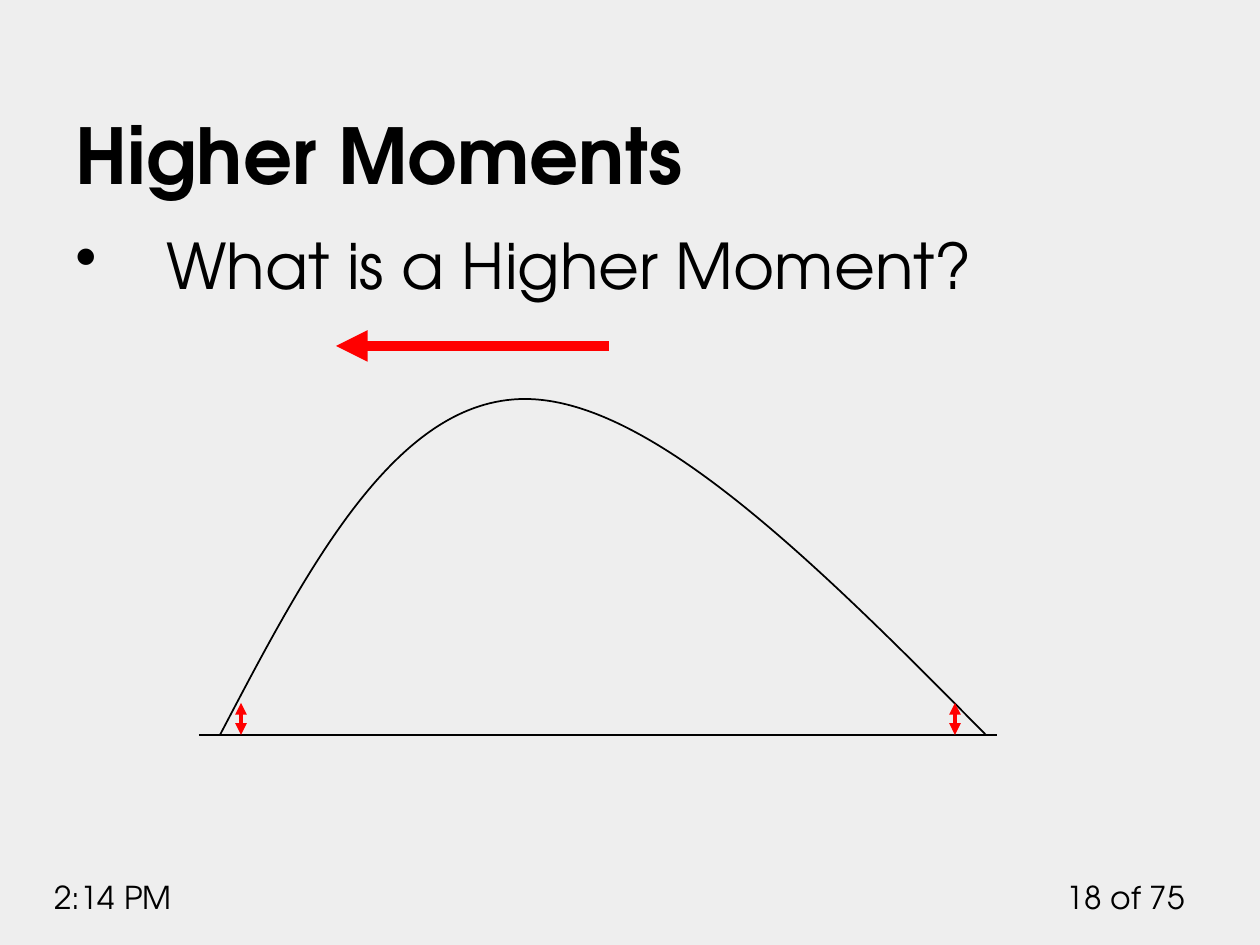
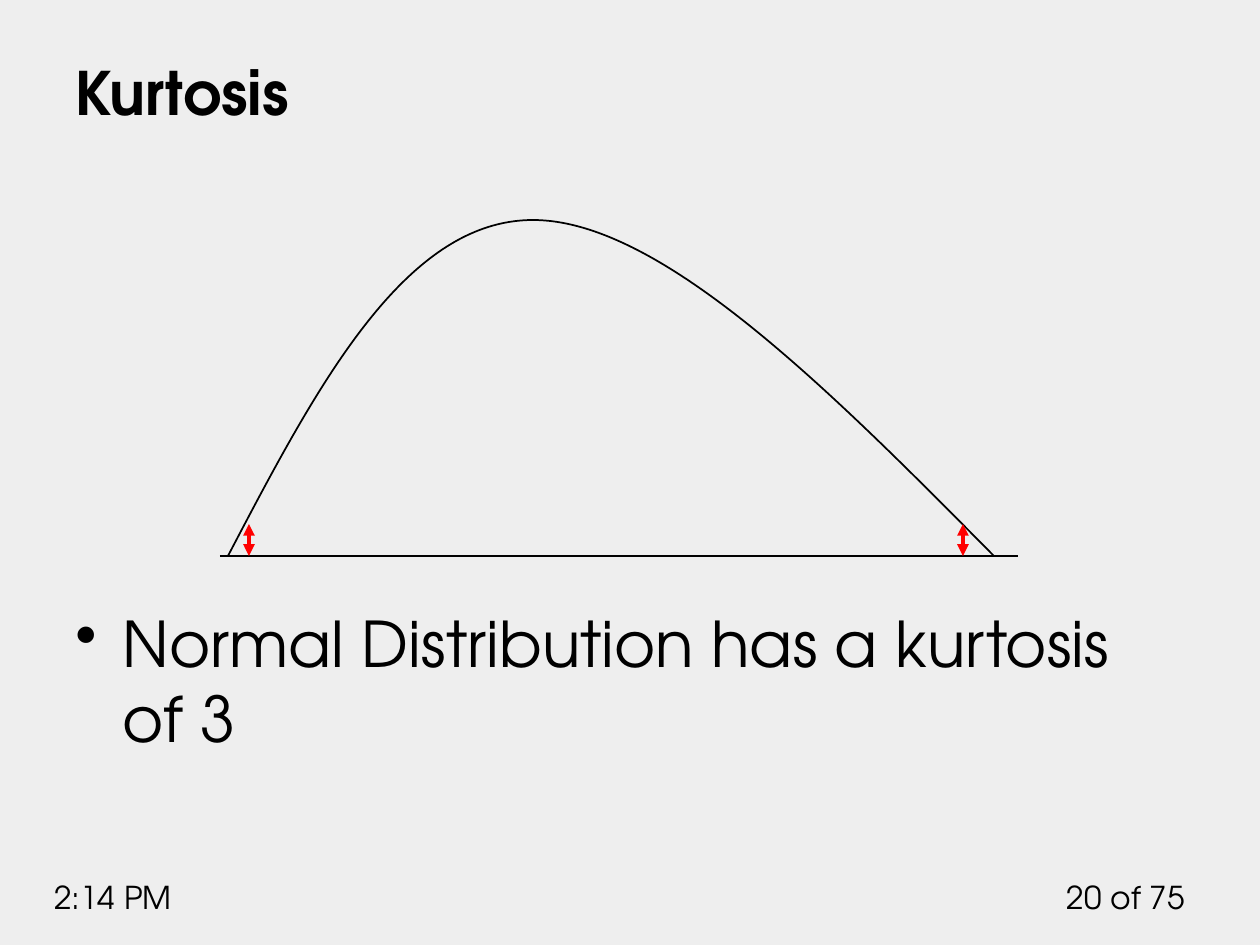
from lxml import etree
from pptx import Presentation
from pptx import util as u
from pptx.dml.color import RGBColor
from pptx.enum import shapes, text
from pptx.oxml.ns import qn

PX = 914400 / 126  # EMU in one px
FONT = "TeX Gyre Adventor"
COLORS = {"background": "EEEEEE", "ink": "000000", "accent": "FF0000"}

# Skewed curve, relative to its top left corner: start, then control and end points
CURVE_HEIGHT = 336
CURVE_START = (0, CURVE_HEIGHT)
CURVE_POINTS = [(88, 168), (176, 0), (305, 0),
                (432, 0), (600, 168), (766, CURVE_HEIGHT)]
BASE_LENGTH = 798
TAIL_OFFSETS = (21, 735)
TAIL_HEIGHT = 32


def px(value):
    return u.Emu(round(value * PX))


def color(name):
    return RGBColor.from_string(COLORS[name])


def add_text(page, words, left, top, width, height, size=18, bold=False,
             align=text.PP_ALIGN.LEFT, anchor=text.MSO_ANCHOR.TOP, hanging=None):
    """Add a text box; a hanging indent in px makes its paragraph a bullet."""
    box = page.shapes.add_textbox(px(left), px(top), px(width), px(height))
    frame = box.text_frame
    frame.word_wrap = True
    frame.vertical_anchor = anchor
    para = frame.paragraphs[0]
    para.alignment = align
    if hanging:
        props = para._p.get_or_add_pPr()
        props.set("marL", str(px(hanging)))
        props.set("indent", str(-px(hanging)))
        etree.SubElement(props, qn("a:buChar")).set("char", "•")
    span = para.add_run()
    span.text = words
    span.font.name = FONT
    span.font.size = u.Pt(size)
    span.font.bold = bold
    span.font.color.rgb = color("ink")


def add_line(page, start, end, ink="ink", weight=1, arrowheads=()):
    """Add a straight line; arrowheads may hold headEnd and tailEnd, in that order."""
    line = page.shapes.add_connector(shapes.MSO_CONNECTOR.STRAIGHT,
                                     *map(px, (*start, *end)))
    line.line.color.rgb = color(ink)
    line.line.width = u.Pt(weight)
    outline = line.line._get_or_add_ln()
    for arrowhead in arrowheads:
        etree.SubElement(outline, qn(f"a:{arrowhead}")).set("type", "triangle")
    etree.SubElement(line._element.spPr, qn("a:effectLst"))


def add_curve(page, left, top):
    builder = page.shapes.build_freeform(*CURVE_START, scale=PX)
    builder.add_line_segments(CURVE_POINTS, close=False)
    curve = builder.convert_to_shape(px(left), px(top))
    curve.shadow.inherit = False
    curve.fill.background()
    curve.line.color.rgb = color("ink")
    curve.line.width = u.Pt(1)
    # Turn every three line points into one cubic Bézier segment
    segments = list(curve._element.iter(qn("a:lnTo")))
    for first in range(0, len(segments), 3):
        bezier, *others = segments[first:first + 3]
        bezier.tag = qn("a:cubicBezTo")
        for other in others:
            bezier.append(other[0])
            other.getparent().remove(other)


def add_distribution(page, left, top, base_left):
    """Add the base line, the curve and the arrows that mark its two tails."""
    bottom = top + CURVE_HEIGHT
    add_line(page, (base_left, bottom), (base_left + BASE_LENGTH, bottom))
    add_curve(page, left, top)
    for offset in TAIL_OFFSETS:
        x = left + offset
        add_line(page, (x, bottom - TAIL_HEIGHT), (x, bottom), ink="accent",
                 weight=2.25, arrowheads=("headEnd", "tailEnd"))


def add_title(page, words, bottom, size):
    add_text(page, words, 63, 49, 1134, bottom - 49, size=size, bold=True,
             anchor=text.MSO_ANCHOR.BOTTOM)


def add_bullet(page, words, top, hanging):
    add_text(page, words, 63, top, 1134, 844 - top, size=36, hanging=hanging)


def add_page(deck, number):
    """Add a page with the shared background and footers."""
    page = deck.slides.add_slide(deck.slide_layouts[6])
    page.background.fill.solid()
    page.background.fill.fore_color.rgb = color("background")
    add_text(page, f"{number} of 75", 1050, 872, 147, 50, align=text.PP_ALIGN.RIGHT)
    add_text(page, "2:14 PM", 42, 872, 199, 50)
    return page


def main():
    deck = Presentation()
    deck.slide_width, deck.slide_height = px(1260), px(945)

    # Higher moments
    page = add_page(deck, 18)
    add_title(page, "Higher Moments", bottom=206, size=44)
    add_bullet(page, "What is a Higher Moment?", top=220, hanging=91)
    add_distribution(page, left=220, top=399, base_left=199)
    add_line(page, (609, 346), (336, 346), ink="accent", weight=6,
             arrowheads=("tailEnd",))

    # Kurtosis
    page = add_page(deck, 20)
    add_title(page, "Kurtosis", bottom=134, size=34.2)
    add_bullet(page, "Normal Distribution has a kurtosis of 3", top=598, hanging=47)
    add_distribution(page, left=228, top=220, base_left=220)

    deck.save("out.pptx")


if __name__ == "__main__":
    main()
